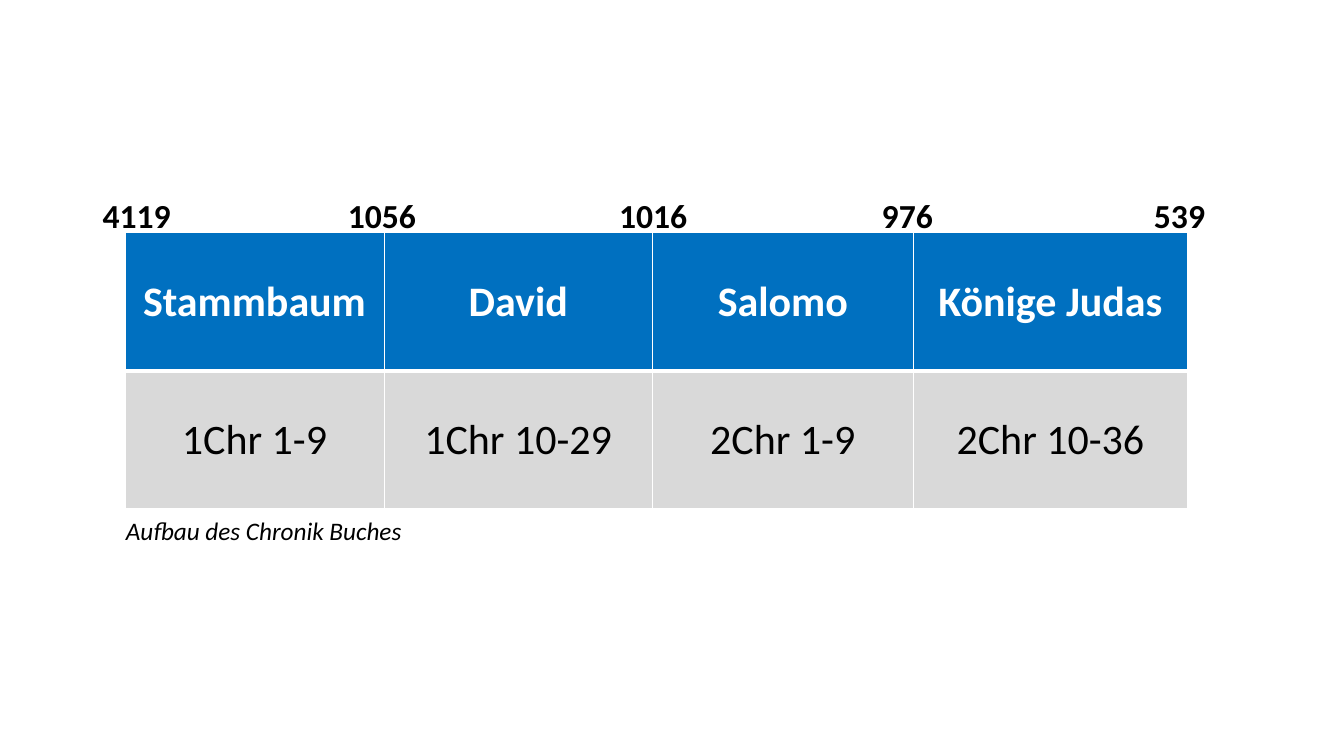
import pptx
import pptx.util
import pptx.dml.color
import pptx.enum.text
import pptx.oxml

Inches, Pt = pptx.util.Inches, pptx.util.Pt
ALIGN = pptx.enum.text.PP_ALIGN
ANCHOR = pptx.enum.text.MSO_ANCHOR
NS = 'xmlns:a="http://schemas.openxmlformats.org/drawingml/2006/main"'

YEARS = ["4119", "1056", "1016", "976", "539"]
ROWS = [
    ["Stammbaum", "David", "Salomo", "Könige Judas"],
    ["1Chr 1-9", "1Chr 10-29", "2Chr 1-9", "2Chr 10-36"],
]
CAPTION = "Aufbau des Chronik Buches"

HEX = {"blue": "0070C0", "grey": "D9D9D9", "white": "FFFFFF", "black": "000000"}
FILLS = ["blue", "grey"]
FONTS = [
    {"size": Pt(30), "bold": True, "color": "white"},
    {"size": Pt(30), "bold": False, "color": "black"},
]
LINES = [
    {"lnL": 1, "lnR": 1, "lnT": 1, "lnB": 3},
    {"lnL": 1, "lnR": 1, "lnT": 3, "lnB": 1},
]
YEAR_FONT = {"size": Pt(24), "bold": True, "color": "black"}
NOTE_FONT = {"size": Pt(18), "italic": True, "color": "black"}

LEFT, TOP, HIGH = 1.24, 2.31, 1.37
WIDTHS = [2.57, 2.66, 2.59, 2.72]
STOPS = [2.77, 5.46, 7.98, 10.68]


def color(name):
    return pptx.dml.color.RGBColor.from_string(HEX[name])


def style(run, looks):
    run.font.name = "Calibri"
    for key, value in looks.items():
        if key == "color":
            run.font.color.rgb = color(value)
        else:
            setattr(run.font, key, value)


def write(par, text, looks):
    run = par.add_run()
    run.text = text
    style(run, looks)


def border(cell, lines):
    """Draw white cell borders; they must stand before the cell's fill."""
    props = cell._tc.get_or_add_tcPr()
    for spot, (side, width) in enumerate(lines.items()):
        props.insert(spot, pptx.oxml.parse_xml(
            f'<a:{side} {NS} w="{Pt(width)}"><a:solidFill>'
            f'<a:srgbClr val="{HEX["white"]}"/></a:solidFill></a:{side}>'))


def add_grid(slide):
    grid = slide.shapes.add_table(
        len(ROWS), len(WIDTHS), Inches(LEFT), Inches(TOP),
        Inches(sum(WIDTHS)), Inches(HIGH * len(ROWS))).table
    for col, width in zip(grid.columns, WIDTHS):
        col.width = Inches(width)
    pads = {"margin_left": Inches(0.14), "margin_right": Inches(0.14),
            "margin_top": 0, "margin_bottom": 0,
            "vertical_anchor": ANCHOR.MIDDLE}
    for r, row in enumerate(ROWS):
        grid.rows[r].height = Inches(HIGH)
        for c, text in enumerate(row):
            cell = grid.cell(r, c)
            for key, value in pads.items():
                setattr(cell, key, value)
            cell.fill.solid()
            cell.fill.fore_color.rgb = color(FILLS[r])
            border(cell, LINES[r])
            par = cell.text_frame.paragraphs[0]
            par.alignment = ALIGN.CENTER
            write(par, text, FONTS[r])


def add_text(slide, box, text, looks, wrap):
    frame = slide.shapes.add_textbox(*map(Inches, box)).text_frame
    frame.word_wrap = wrap
    frame.vertical_anchor = ANCHOR.MIDDLE
    write(frame.paragraphs[0], text, looks)
    return frame.paragraphs[0]


def set_stops(par, stops):
    """Give the paragraph centred tab stops."""
    tabs = "".join(f'<a:tab pos="{Inches(x)}" algn="ctr"/>' for x in stops)
    par._p.get_or_add_pPr().append(
        pptx.oxml.parse_xml(f"<a:tabLst {NS}>{tabs}</a:tabLst>"))


def main():
    deck = pptx.Presentation()
    deck.slide_width, deck.slide_height = Inches(13.33), Inches(7.5)
    slide = deck.slides.add_slide(deck.slide_layouts[6])
    add_grid(slide)
    add_text(slide, (1.15, 5.06, 2.96, 0.4), CAPTION, NOTE_FONT, False)
    line = add_text(slide, (0.92, 1.88, 12.28, 0.5),
                    "\t".join(YEARS), YEAR_FONT, True)
    set_stops(line, STOPS)
    deck.save("out.pptx")


if __name__ == "__main__":
    main()
